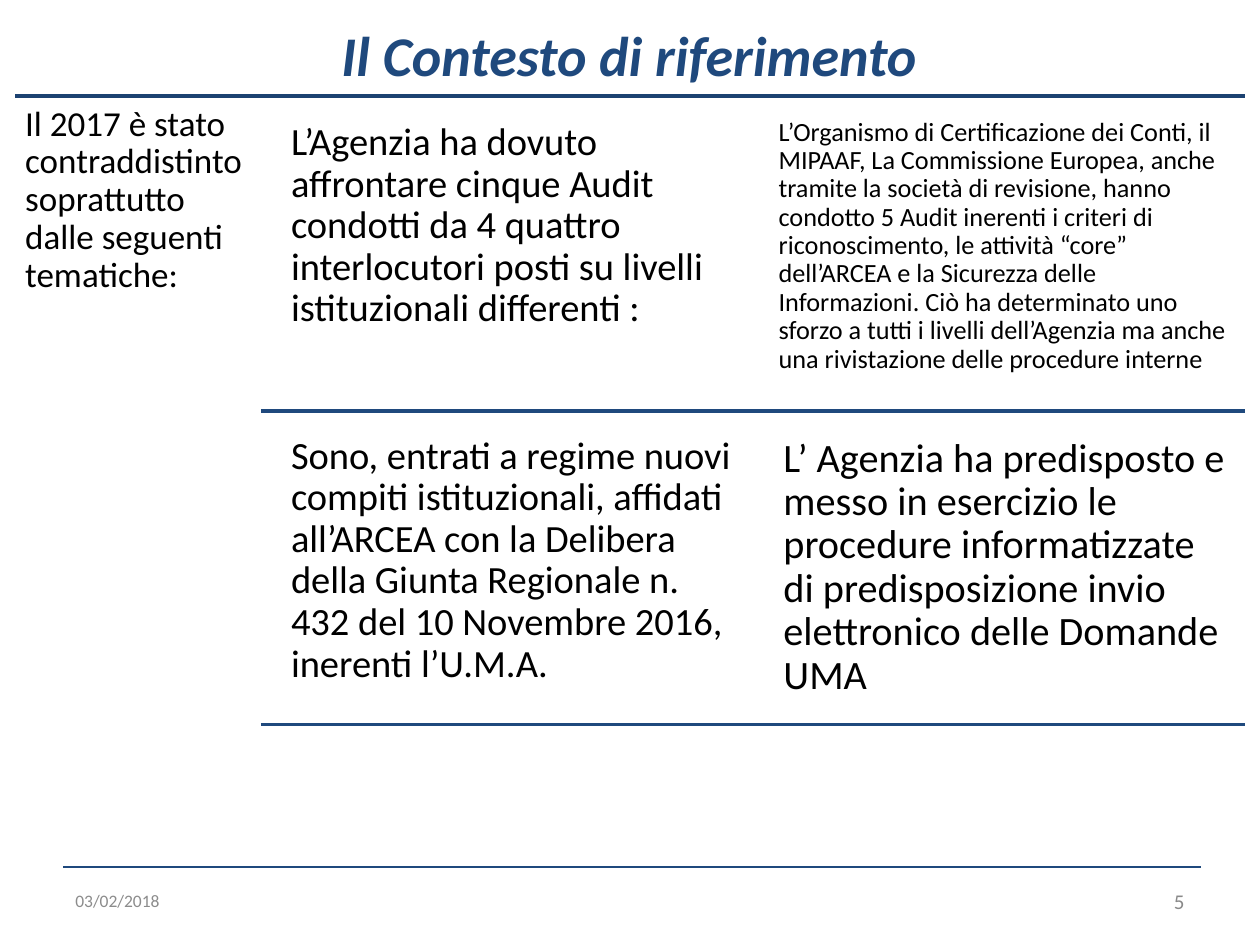
from lxml import etree
from pptx import Presentation
from pptx.dml.color import RGBColor
from pptx.enum import shapes, text
from pptx.oxml.ns import qn
from pptx.util import Inches, Pt

NAVY = "1F497D"
LEFT, RIGHT = 0.12, 9.88
ROW_TOPS = (0.88, 3.37)
COLUMN_LEFTS = (2.22, 6.12)
CELL_WIDTH, CELL_HEIGHT = 3.76, 2.38

INTRO = "Il 2017 è stato contraddistinto soprattutto dalle seguenti tematiche:"
TOPICS = [
    [
        ("L’Agenzia ha dovuto affrontare cinque Audit condotti da 4 quattro "
         "interlocutori posti su livelli istituzionali differenti :", 22, 0.09),
        ("L’Organismo di Certificazione dei Conti, il MIPAAF, La Commissione "
         "Europea, anche tramite la società di revisione, hanno condotto 5 "
         "Audit inerenti i criteri di riconoscimento, le attività “core” "
         "dell’ARCEA e la Sicurezza delle Informazioni. Ciò ha determinato uno "
         "sforzo a tutti i livelli dell’Agenzia ma anche una rivistazione delle "
         "procedure interne", 15, 0.06),
    ],
    [
        ("Sono, entrati a regime nuovi compiti istituzionali, affidati all’ARCEA "
         "con la Delibera della Giunta Regionale n. 432 del 10 Novembre 2016, "
         "inerenti l’U.M.A.", 22, 0.09),
        ("L’ Agenzia ha predisposto e messo in esercizio le procedure "
         "informatizzate di predisposizione invio elettronico delle Domande UMA",
         23, 0.1),
    ],
]


def color(value):
    return RGBColor.from_string(value)


def add_rule(page, left, right, top, line_color=NAVY, width=2):
    rule = page.shapes.add_connector(
        shapes.MSO_CONNECTOR.STRAIGHT,
        Inches(left), Inches(top), Inches(right), Inches(top))
    rule.line.color.rgb = color(line_color)
    rule.line.width = Pt(width)
    etree.SubElement(rule.element.spPr, qn("a:effectLst"))


def add_text(page, place, content, size, font_color="000000",
             align=text.PP_ALIGN.LEFT, anchor=text.MSO_ANCHOR.TOP):
    box = page.shapes.add_textbox(*map(Inches, place))
    frame = box.text_frame
    frame.word_wrap = True
    frame.vertical_anchor = anchor
    frame.text = content
    para = frame.paragraphs[0]
    para.alignment = align
    font = para.runs[0].font
    font.name = "Calibri"
    font.size = Pt(size)
    font.color.rgb = color(font_color)
    return box


def add_title(page, content):
    box = add_text(page, (0.1, 0.11, 9.79, 0.81), content, 32, NAVY,
                   text.PP_ALIGN.CENTER)
    font = box.text_frame.paragraphs[0].runs[0].font
    font.bold = font.italic = True


def add_body(page, place, content, size, inset):
    frame = add_text(page, place, content, size).text_frame
    frame.margin_left = frame.margin_right = Inches(inset)
    frame.margin_top = frame.margin_bottom = Inches(inset)
    frame.paragraphs[0].line_spacing = 0.9


def add_footer(page, left, content, size, font_color, align):
    add_text(page, (left, 6.95, 2.33, 0.4), content, size, font_color, align,
             text.MSO_ANCHOR.MIDDLE)


def main():
    deck = Presentation()
    deck.slide_width, deck.slide_height = Inches(10), Inches(7.5)
    page = deck.slides.add_slide(deck.slide_layouts[6])

    add_rule(page, 0.5, 9.53, 6.88, width=1.5)
    add_title(page, "Il Contesto di riferimento")
    add_footer(page, 0.5, "03/02/2018", 10, "8C8C8C", text.PP_ALIGN.LEFT)
    add_footer(page, 7.17, "5", 12, "898989", text.PP_ALIGN.RIGHT)

    add_rule(page, LEFT, RIGHT, 0.76, "1C4271")
    add_body(page, (LEFT, 0.76, 1.95, 5.12), INTRO, 20, 0.08)
    for top, row in zip(ROW_TOPS, TOPICS):
        for left, (content, size, inset) in zip(COLUMN_LEFTS, row):
            add_body(page, (left, top, CELL_WIDTH, CELL_HEIGHT),
                     content, size, inset)
        add_rule(page, 2.07, RIGHT, top + CELL_HEIGHT)

    deck.save("out.pptx")


if __name__ == "__main__":
    main()
